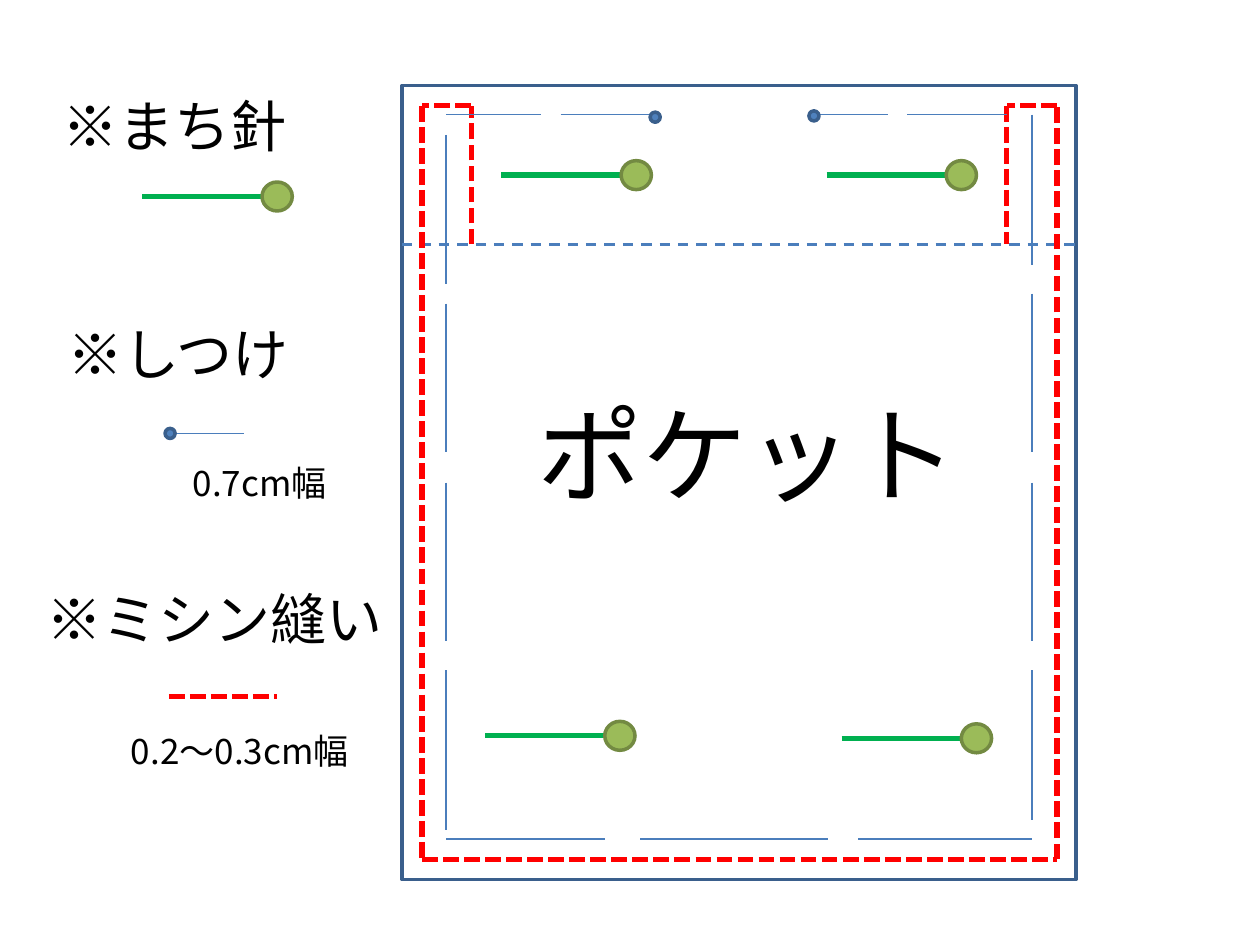
from typing import NamedTuple

from pptx import Presentation
from pptx.dml.color import RGBColor
from pptx.enum.dml import MSO_LINE_DASH_STYLE as Dash
from pptx.enum.shapes import MSO_CONNECTOR, MSO_SHAPE
from pptx.enum.text import MSO_AUTO_SIZE
from pptx.oxml.ns import qn
from pptx.util import Inches, Pt

FONT = "Noto Sans CJK JP"
HEAD_WIDTH, HEAD_HEIGHT = 0.24, 0.23
PIN_LENGTH = 0.95
KNOT = 0.08


class Stroke(NamedTuple):
    color: str
    width: float
    dash: Dash | None = None


class Label(NamedTuple):
    text: str
    left: float
    top: float
    width: float
    height: float
    size: int


OUTLINE = Stroke("3A5F8C", 2)
FOLD = Stroke("4B7EBC", 1.5, Dash.DASH)
MACHINE = Stroke("FF0000", 3, Dash.SQUARE_DOT)
BASTING = Stroke("4B7EBC", 0.75)
NEEDLE = Stroke("00B050", 3)
HEAD_EDGE = Stroke("738A42", 2)

LABELS = [
    Label("ポケット", 4.17, 3.04, 3.66, 1.11, 60),
    Label("※まち針", 0.4, 0.68, 2.39, 0.64, 32),
    Label("※しつけ", 0.44, 2.49, 2.35, 0.64, 32),
    Label("※ミシン縫い", 0.27, 4.59, 3.07, 0.64, 32),
    Label("0.2～0.3cm幅", 0.94, 5.74, 2.02, 0.44, 20),
    Label("0.7cm幅", 1.43, 3.61, 1.32, 0.44, 20),
]


def rgb(color: str) -> RGBColor:
    return RGBColor.from_string(color)


def apply_stroke(line, stroke: Stroke) -> None:
    line.color.rgb = rgb(stroke.color)
    line.width = Pt(stroke.width)
    if stroke.dash is not None:
        line.dash_style = stroke.dash


def draw_line(shapes, x1: float, y1: float, x2: float, y2: float, stroke: Stroke) -> None:
    connector = shapes.add_connector(
        MSO_CONNECTOR.STRAIGHT, Inches(x1), Inches(y1), Inches(x2), Inches(y2))
    apply_stroke(connector.line, stroke)
    properties = connector._element.spPr
    properties.append(properties.makeelement(qn("a:effectLst"), {}))


def draw_shape(shapes, kind: MSO_SHAPE, left: float, top: float, width: float,
               height: float, stroke: Stroke, fill: str | None = None) -> None:
    shape = shapes.add_shape(kind, Inches(left), Inches(top), Inches(width), Inches(height))
    shape.shadow.inherit = False
    if fill is None:
        shape.fill.background()
    else:
        shape.fill.solid()
        shape.fill.fore_color.rgb = rgb(fill)
    apply_stroke(shape.line, stroke)


def draw_pin(shapes, left: float, y: float) -> None:
    head_left = left + PIN_LENGTH
    draw_line(shapes, left, y, head_left, y, NEEDLE)
    draw_shape(shapes, MSO_SHAPE.OVAL, head_left, y - HEAD_HEIGHT / 2,
               HEAD_WIDTH, HEAD_HEIGHT, HEAD_EDGE, "9BBB59")


def draw_knot(shapes, left: float, top: float) -> None:
    draw_shape(shapes, MSO_SHAPE.OVAL, left, top, KNOT, KNOT, OUTLINE, "4F81BD")


def draw_label(shapes, label: Label) -> None:
    box = shapes.add_textbox(Inches(label.left), Inches(label.top),
                             Inches(label.width), Inches(label.height))
    frame = box.text_frame
    frame.word_wrap = True
    frame.auto_size = MSO_AUTO_SIZE.SHAPE_TO_FIT_TEXT
    run = frame.paragraphs[0].add_run()
    run.text = label.text
    run.font.size = Pt(label.size)
    run.font.name = FONT
    run.font.color.rgb = rgb("000000")
    # Japanese glyphs take the East Asian typeface
    properties = run.font._element
    properties.append(properties.makeelement(qn("a:ea"), {"typeface": FONT}))


def draw_pocket(shapes) -> None:
    # Cloth and fold line
    left, top, width, height, fold = 3.19, 0.68, 5.35, 6.3, 1.94
    draw_shape(shapes, MSO_SHAPE.RECTANGLE, left, top, width, height, OUTLINE)
    draw_line(shapes, left, fold, left + width, fold, FOLD)

    # Machine stitching: one continuous route around three sides
    route = [(3.74, fold), (3.74, 0.84), (3.35, 0.84), (3.35, 6.82),
             (8.39, 6.82), (8.39, 0.84), (7.99, 0.84), (7.99, fold)]
    for start, end in zip(route, route[1:]):
        draw_line(shapes, *start, *end, MACHINE)

    # Basting: stitches along rows, then along columns
    rows = {
        0.91: [(3.54, 4.29), (4.45, 5.16), (6.5, 7.05), (7.2, 7.99)],
        6.66: [(3.54, 4.8), (5.08, 6.57), (6.81, 8.19)],
    }
    columns = {
        3.54: [(1.07, 2.25), (2.41, 3.59), (3.83, 5.09), (5.32, 6.59)],
        8.19: [(0.91, 2.1), (2.33, 3.59), (3.83, 5.09), (5.32, 6.51)],
    }
    for y, stitches in rows.items():
        for start, end in stitches:
            draw_line(shapes, start, y, end, y, BASTING)
    for x, stitches in columns.items():
        for start, end in stitches:
            draw_line(shapes, x, start, x, end, BASTING)
    draw_knot(shapes, 5.16, 0.89)
    draw_knot(shapes, 6.42, 0.88)

    # Marking pins
    for x, y in [(3.98, 1.39), (6.56, 1.39), (3.85, 5.84), (6.68, 5.86)]:
        draw_pin(shapes, x, y)


def draw_legend(shapes) -> None:
    draw_pin(shapes, 1.13, 1.56)
    draw_line(shapes, 1.39, 3.44, 1.94, 3.44, BASTING)
    draw_knot(shapes, 1.31, 3.4)
    draw_line(shapes, 1.34, 5.53, 2.2, 5.53, MACHINE)


def main() -> None:
    presentation = Presentation()
    presentation.slide_width = Inches(10)
    presentation.slide_height = Inches(7.5)
    slide = presentation.slides.add_slide(presentation.slide_layouts[6])
    draw_pocket(slide.shapes)
    draw_legend(slide.shapes)
    for label in LABELS:
        draw_label(slide.shapes, label)
    presentation.save("out.pptx")


if __name__ == "__main__":
    main()
